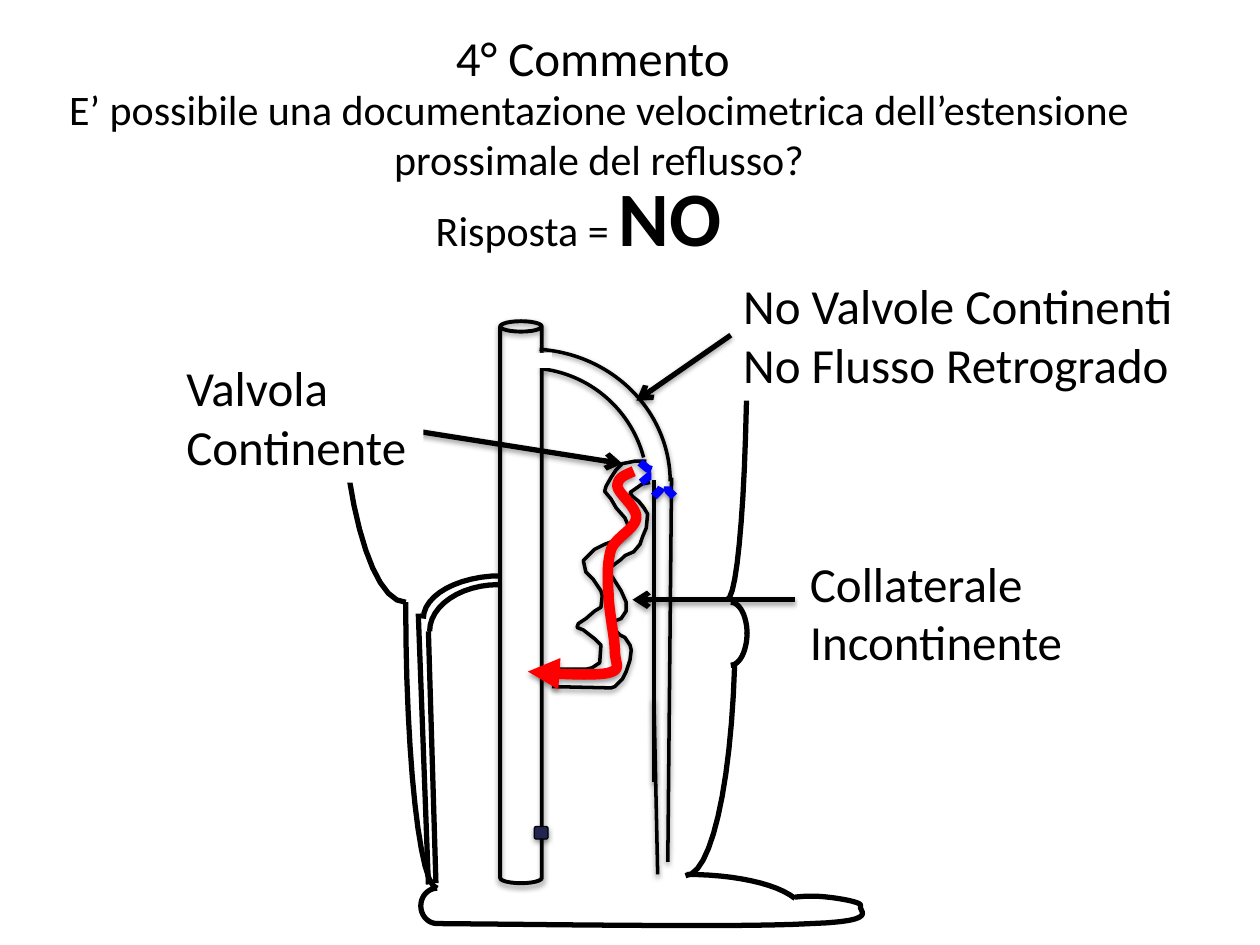
"""Build a slide on whether velocimetry can document the proximal extent of reflux."""
import pptx
import pptx.dml.color
import pptx.enum.shapes
import pptx.enum.text
import pptx.oxml.ns
import pptx.util
from lxml import etree

Inches = pptx.util.Inches
Pt = pptx.util.Pt
qn = pptx.oxml.ns.qn
Shape = pptx.enum.shapes.MSO_SHAPE
BLACK, WHITE, RED, BLUE, NAVY = "000000", "FFFFFF", "FF0000", "0000FF", "21254F"


def rgb(value):
    return pptx.dml.color.RGBColor.from_string(value)


class Sketch:
    font = "Calibri"
    steps = 12

    def __init__(self, slide):
        self.shapes = slide.shapes

    def style_line(self, sp, color, width, shadow, head=None):
        sp.line.color.rgb = rgb(color)
        sp.line.width = Pt(width)
        if head:
            etree.SubElement(sp.line._get_or_add_ln(), qn("a:tailEnd"), type=head)
        self.effects(sp, shadow)

    def effects(self, sp, shadow):
        effects = etree.SubElement(sp._element.spPr, qn("a:effectLst"))
        if shadow:
            outer = etree.SubElement(effects, qn("a:outerShdw"), blurRad=str(Pt(3.1)),
                                     dist=str(Pt(1.6)), dir="5400000", rotWithShape="0")
            color = etree.SubElement(outer, qn("a:srgbClr"), val=BLACK)
            etree.SubElement(color, qn("a:alpha"), val="38000")

    def text(self, box, lines, size, fill=None, align=None):
        sp = self.shapes.add_textbox(*map(Inches, box))
        tf = sp.text_frame
        tf.text = "\n".join(lines)
        tf.word_wrap = True
        if fill:
            sp.fill.solid()
            sp.fill.fore_color.rgb = rgb(fill)
        for p in tf.paragraphs:
            p.alignment = align
            for r in p.runs:
                self.format_run(r, size)
        return sp

    def format_run(self, r, size, bold=False):
        r.font.name = self.font
        r.font.size = Pt(size)
        r.font.bold = bold
        r.font.color.rgb = rgb(BLACK)

    def shape(self, kind, box, fill=None, width=0, adjustments=(), shadow=True):
        sp = self.shapes.add_shape(kind, *map(Inches, box))
        for i, value in enumerate(adjustments):
            sp.adjustments[i] = value
        if fill:
            sp.fill.solid()
            sp.fill.fore_color.rgb = rgb(fill)
        else:
            sp.fill.background()
        if width:
            self.style_line(sp, BLACK, width, shadow)
        else:
            sp.line.fill.background()
            self.effects(sp, shadow)
        return sp

    def line(self, start, end, width=3, shadow=False, head=None):
        s = self.shapes.add_connector(pptx.enum.shapes.MSO_CONNECTOR.STRAIGHT,
                                      *map(Inches, start + end))
        self.style_line(s, BLACK, width, shadow, head)
        return s

    def polyline(self, points, color=BLACK, width=3, shadow=False, head=None):
        emu = [(Inches(x), Inches(y)) for x, y in points]
        builder = self.shapes.build_freeform(*emu[0])
        builder.add_line_segments(emu[1:], close=False)
        sp = builder.convert_to_shape()
        sp.fill.background()
        self.style_line(sp, color, width, shadow, head)

    def curve(self, points, **style):
        """Draw chained cubic Bezier pieces, given as start, control, control, end, ..."""
        track = [points[0]]
        for i in range(0, len(points) - 1, 3):
            piece = points[i:i + 4]
            for k in range(1, self.steps + 1):
                t = k / self.steps
                weights = ((1 - t) ** 3, 3 * t * (1 - t) ** 2, 3 * t * t * (1 - t), t ** 3)
                track.append(tuple(sum(w * pt[axis] for w, pt in zip(weights, piece))
                                   for axis in (0, 1)))
        self.polyline(track, **style)

    def quarter(self, start, end):
        """Draw a quarter ellipse that leaves start horizontally and meets end vertically."""
        (x0, y0), (x1, y1) = start, end
        self.curve([start, (x0 + 0.55 * (x1 - x0), y0), (x1, y1 - 0.55 * (y1 - y0)), end])


def draw_headings(s):
    s.text((3.52, 0.17, 2.41, 0.57), ["4° Commento"], 28)
    s.text((0.24, 0.61, 9.03, 0.91),
           ["E’ possibile una documentazione velocimetrica dell’estensione "
            "prossimale del reflusso?"], 24, align=pptx.enum.text.PP_ALIGN.CENTER)
    answer = s.text((3.36, 1.3, 2.48, 0.84), ["Risposta = "], 24)
    r = answer.text_frame.paragraphs[0].add_run()
    r.text = "NO"
    s.format_run(r, 44, bold=True)


def draw_leg(s):
    for start, end in [
        ((3.47, 7.05), (3.34, 7.19)), ((3.47, 7.33), (3.34, 7.19)),
        ((5.8, 4.78), (5.93, 5.03)), ((5.8, 5.28), (5.93, 5.02)),
        ((3.47, 7.05), (3.22, 4.78)), ((3.22, 4.78), (2.7, 2.8)),
        ((5.77, 4.76), (5.93, 2.66)),
    ]:
        s.quarter(start, end)
    s.curve([(5.44, 6.95), (5.64, 6.95), (5.8, 6.25), (5.83, 5.28)])
    s.curve([(5.45, 6.94), (5.82, 6.94), (6.16, 7.01), (6.31, 7.13)])
    s.curve([(3.47, 7.33), (4.68, 7.34), (5.88, 7.36), (6.44, 7.33), (7, 7.31),
             (6.81, 7.23), (6.83, 7.19), (6.85, 7.16), (6.66, 7.13), (6.57, 7.12),
             (6.48, 7.11), (6.4, 7.11), (6.31, 7.12)])


def draw_veins(s):
    s.quarter((3.96, 4.64), (3.41, 5.01))
    s.shape(Shape.CAN, (3.97, 2.55, 0.33, 4.46), width=2.25)
    s.shape(Shape.ROUNDED_RECTANGLE, (4.24, 6.56, 0.11, 0.1), NAVY, 0.75)
    s.shape(Shape.ARC, (3.23, 2.92, 1.91, 1.91), width=2, adjustments=(166.19, 207.1))
    s.shape(Shape.ARC, (3.09, 2.77, 2.23, 2.11), width=2, adjustments=(164.54, 215.86))
    s.quarter((3.98, 4.57), (3.36, 4.91))
    for start, end in [((3.4, 5.01), (3.46, 7.01)), ((3.32, 4.87), (3.4, 7.02))]:
        s.line(start, end)
    for start, end in [((5.19, 3.81), (5.19, 6.21)), ((5.33, 3.79), (5.3, 6.84)),
                       ((5.19, 5.55), (5.22, 6.94))]:
        s.line(start, end, 2, True)


def draw_collateral(s):
    left_wall = [
        (5.13, 3.66), (5.04, 3.66), (4.94, 3.68), (4.89, 3.73), (4.85, 3.79), (4.81, 3.86),
        (4.8, 3.9), (4.85, 3.96), (4.89, 4.03), (4.96, 4.11), (4.99, 4.18), (4.98, 4.24),
        (4.91, 4.28), (4.8, 4.32), (4.72, 4.36), (4.66, 4.42), (4.63, 4.45), (4.65, 4.54),
        (4.71, 4.6), (4.77, 4.69), (4.78, 4.73), (4.77, 4.82), (4.72, 4.85), (4.65, 4.91),
        (4.59, 4.95), (4.58, 4.98), (4.63, 5), (4.72, 5.07), (4.77, 5.12), (4.76, 5.26),
        (4.7, 5.3), (4.66, 5.31), (4.37, 5.31)]
    right_wall = [
        (5.16, 3.83), (5.1, 3.84), (5, 3.91), (5.02, 3.94), (5.07, 3.98), (5.11, 4.03),
        (5.14, 4.08), (5.13, 4.19), (5.1, 4.26), (5.08, 4.32), (5.03, 4.38), (4.96, 4.41),
        (4.93, 4.44), (4.85, 4.5), (4.82, 4.53), (4.86, 4.58), (4.93, 4.69), (4.97, 4.78),
        (4.97, 4.85), (4.93, 4.91), (4.85, 4.94), (4.87, 4.99), (4.92, 5.04), (4.96, 5.06),
        (5, 5.12), (5.01, 5.16), (5, 5.24), (4.97, 5.33), (4.94, 5.39), (4.88, 5.45),
        (4.85, 5.46), (4.38, 5.45)]
    for wall in (left_wall, right_wall):
        s.polyline(wall, width=2, shadow=True)
    s.shape(Shape.RECTANGLE, (4.24, 2.8, 0.14, 0.12), WHITE, shadow=False)
    s.curve([(5.03, 3.74), (4.96, 3.77), (4.9, 3.79), (4.9, 3.86), (4.91, 3.92),
             (5.06, 4.03), (5.05, 4.11), (5.04, 4.2), (4.89, 4.26), (4.85, 4.36),
             (4.82, 4.46), (4.82, 4.58), (4.83, 4.71), (4.83, 4.84), (4.88, 5.06),
             (4.88, 5.16), (4.88, 5.27), (4.94, 5.31), (4.83, 5.34), (4.71, 5.37),
             (4.3, 5.34), (4.19, 5.33)], color=RED, width=6, shadow=True, head="triangle")


def draw_labels(s):
    no_valves = s.text((5.8, 2.14, 3.68, 1.04),
                       ["No Valvole Continenti", "No Flusso Retrogrado"], 28, WHITE)
    pointer = s.line((5.8, 2.66), (5.05, 3.18), 3, True, "arrow")
    pointer.begin_connect(no_valves, 1)
    s.line((6.31, 4.76), (5.02, 4.76), 3, True, "arrow")
    s.text((6.33, 4.34, 2.24, 1.04), ["Collaterale", "Incontinente"], 28, WHITE)
    s.line((3.23, 3.41), (4.94, 3.68), 3, True, "arrow")
    s.text((1.38, 2.79, 1.98, 1.04), ["Valvola", "Continente"], 28, WHITE)


def draw_valve_cusps(s):
    for cusp in [
        [(5.08, 3.67), (5.14, 3.72), (5.17, 3.73)],
        [(5.09, 3.83), (5.15, 3.78), (5.17, 3.78)],
        [(5.19, 3.94), (5.24, 3.89), (5.25, 3.87)],
        [(5.35, 3.94), (5.3, 3.89), (5.3, 3.86)],
    ]:
        s.polyline(cusp, BLUE, 4.5, True)


def main():
    prs = pptx.Presentation()
    prs.slide_width, prs.slide_height = Inches(10), Inches(7.5)
    s = Sketch(prs.slides.add_slide(prs.slide_layouts[6]))
    for draw in (draw_headings, draw_veins, draw_leg, draw_collateral, draw_labels,
                 draw_valve_cusps):
        draw(s)
    prs.save("out.pptx")


if __name__ == "__main__":
    main()
